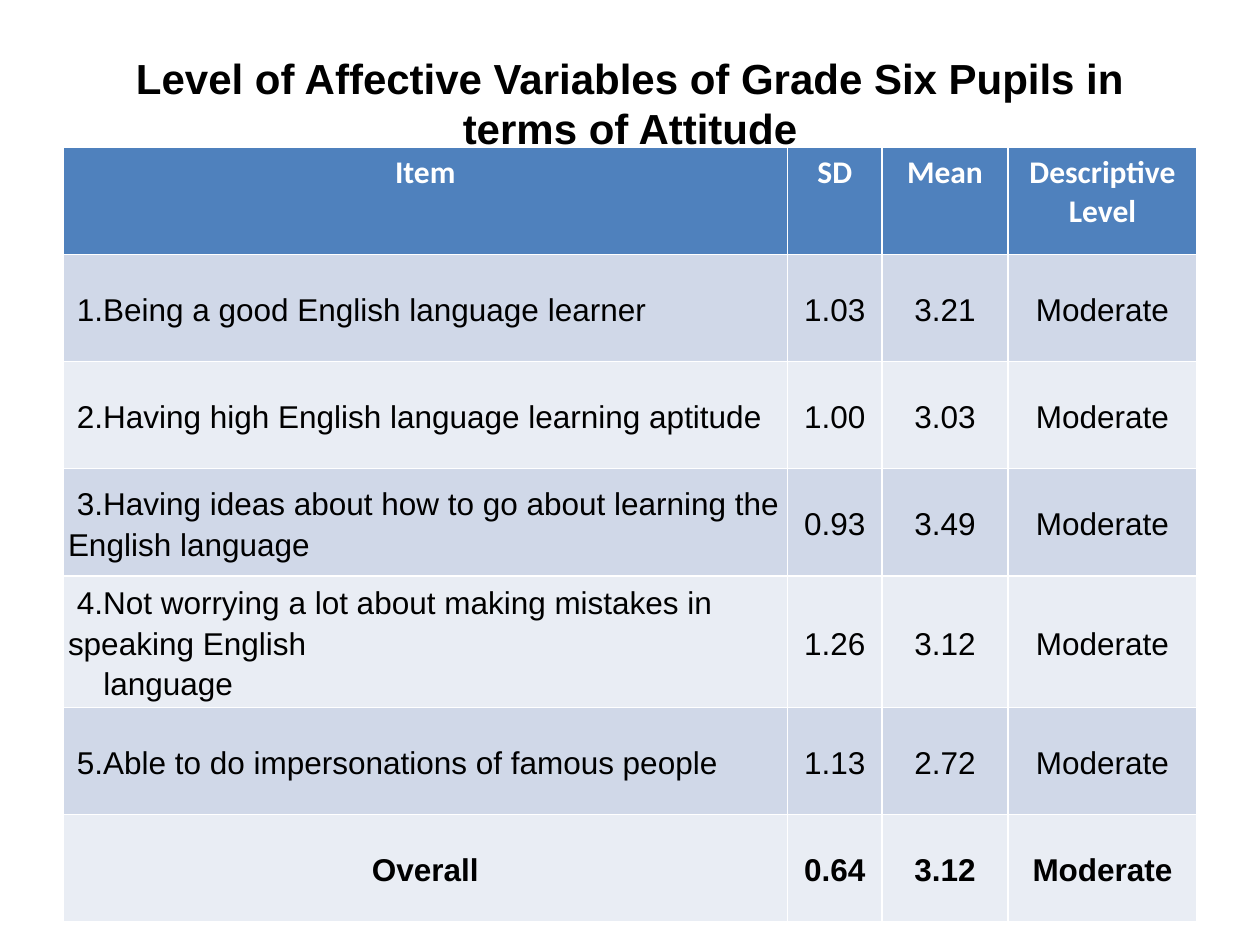
from pptx import Presentation
from pptx import util as u
from pptx.dml.color import RGBColor
from pptx.enum import text

COLORS = {"header": "4F81BD", "odd": "D0D8E8", "even": "E9EDF4",
          "dark": "000000", "light": "FFFFFF"}
TITLE = "Level of Affective Variables of Grade Six Pupils in terms of Attitude"
HEADINGS = ["Item", "SD", "Mean", "Descriptive Level"]
RATINGS = [
    ("1.Being a good English language learner", "1.03", "3.21", "Moderate"),
    ("2.Having high English language learning aptitude", "1.00", "3.03", "Moderate"),
    ("3.Having ideas about how to go about learning the English language",
     "0.93", "3.49", "Moderate"),
    ("4.Not worrying a lot about making mistakes in speaking English\nlanguage",
     "1.26", "3.12", "Moderate"),
    ("5.Able to do impersonations of famous people", "1.13", "2.72", "Moderate"),
    ("Overall", "0.64", "3.12", "Moderate"),
]
COLUMN_WIDTHS = [5.75, 0.75, 1, 1.5]
ROW_HEIGHT = 0.85
ITEM_INDENT, CONTINUED_INDENT = 0.07, 0.28


class RatingSlide:
    """Holds the style and the current slide, and adds each kind of element."""

    def __init__(self, deck):
        self.slide = deck.slides.add_slide(deck.slide_layouts[5])
        self.width, self.height = deck.slide_width, deck.slide_height
        self.left = 0.05

    def style(self, paragraph, size, color="dark", name="Arial", bold=False,
              align=text.PP_ALIGN.CENTER):
        paragraph.alignment = align
        font = paragraph.font
        font.size, font.name, font.bold = u.Pt(size), name, bold
        font.color.rgb = RGBColor.from_string(COLORS[color])

    def title(self, wording, top, height):
        title = self.slide.shapes.title
        title.left, title.top = int(self.width * self.left), int(self.height * top)
        title.width = int(self.width * (1 - 2 * self.left))
        title.height = int(self.height * height)
        title.text_frame.text = wording
        title.text_frame.vertical_anchor = text.MSO_ANCHOR.MIDDLE
        self.style(title.text_frame.paragraphs[0], 24, bold=True)

    def table(self, top, headings, ratings):
        rows = [headings, *ratings]
        table = self.slide.shapes.add_table(
            len(rows), len(headings), int(self.width * self.left),
            int(self.height * top), u.Inches(sum(COLUMN_WIDTHS)),
            u.Inches(ROW_HEIGHT * len(rows))).table
        for column, width in zip(table.columns, COLUMN_WIDTHS):
            column.width = u.Inches(width)
        for r, entries in enumerate(rows):
            table.rows[r].height = u.Inches(ROW_HEIGHT)
            for c, wording in enumerate(entries):
                cell = table.cell(r, c)
                cell.text = wording
                if r == 0:
                    self.header_cell(cell)
                else:
                    overall = r == len(ratings)
                    self.body_cell(cell, "odd" if r % 2 else "even",
                                   c == 0 and not overall, overall)

    def fill(self, cell, color):
        cell.fill.solid()
        cell.fill.fore_color.rgb = RGBColor.from_string(COLORS[color])

    def header_cell(self, cell):
        self.fill(cell, "header")
        self.style(cell.text_frame.paragraphs[0], 18, "light", "Calibri", True)

    def body_cell(self, cell, color, is_item, bold):
        self.fill(cell, color)
        cell.vertical_anchor = text.MSO_ANCHOR.MIDDLE
        cell.margin_left = cell.margin_right = u.Inches(0.04)
        cell.margin_top = cell.margin_bottom = u.Inches(0.04)
        align = text.PP_ALIGN.LEFT if is_item else text.PP_ALIGN.CENTER
        for line, paragraph in enumerate(cell.text_frame.paragraphs):
            self.style(paragraph, 18, bold=bold, align=align)
            paragraph.line_spacing = 1.15
            if is_item:
                indent = CONTINUED_INDENT if line else ITEM_INDENT
                properties = paragraph._p.get_or_add_pPr()
                properties.set("marL", "0")
                properties.set("indent", str(u.Inches(indent)))


def main():
    deck = Presentation()
    deck.slide_width, deck.slide_height = u.Inches(10), u.Inches(7.5)
    attitude = RatingSlide(deck)
    attitude.title(TITLE, 0.04, 0.137)
    attitude.table(0.156, HEADINGS, RATINGS)
    deck.save("out.pptx")


if __name__ == "__main__":
    main()
